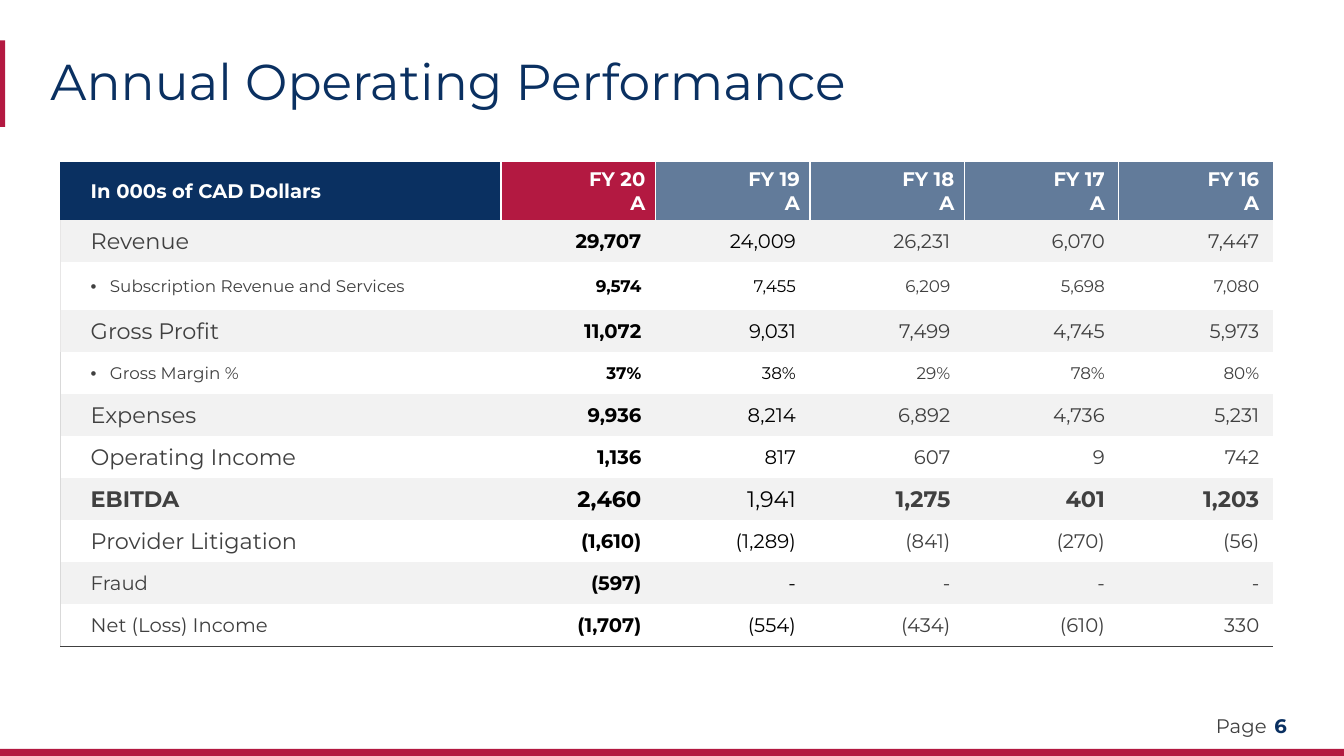
from lxml import etree
from pptx import Presentation
from pptx.dml.color import RGBColor
from pptx.enum.shapes import MSO_SHAPE
from pptx.enum.text import MSO_ANCHOR, MSO_AUTO_SIZE, PP_ALIGN
from pptx.oxml.ns import qn
from pptx.util import Inches, Pt

RECTANGLE = MSO_SHAPE.RECTANGLE
MIDDLE = MSO_ANCHOR.MIDDLE
TOP = MSO_ANCHOR.TOP
LEFT = PP_ALIGN.LEFT
RIGHT = PP_ALIGN.RIGHT
NO_AUTOFIT = MSO_AUTO_SIZE.NONE

FONT = "Montserrat"
COLORS = {
    "red": "B31941",
    "navy": "0A3061",
    "slate": "627B9A",
    "gray": "404040",
    "black": "000000",
    "white": "FFFFFF",
    "band": "F2F2F2",
    "edge": "D9D9D9",
    "upper_edge": "E7E6E6",
}
PLAIN_TABLE_STYLE = "{2D5ABB26-0587-4C30-8999-92F81FD0307C}"
TABLE_WIDTH, LABEL_WIDTH = 12.03, 4.37
TABLE_HEIGHT, HEADER_HEIGHT, SUBSCRIPTION_HEIGHT = 4.8, 0.57, 0.48
YEARS = ["FY 20", "FY 19", "FY 18", "FY 17", "FY 16"]
BULLET_ROWS = ["Subscription Revenue and Services", "Gross Margin %"]
TOTAL_ROW = "EBITDA"
# label, label size, value size, values
ROWS = [
    ("Revenue", 16, 14, ["29,707", "24,009", "26,231", "6,070", "7,447"]),
    ("Subscription Revenue and Services", 12, 12,
     ["9,574", "7,455", "6,209", "5,698", "7,080"]),
    ("Gross Profit", 16, 14, ["11,072", "9,031", "7,499", "4,745", "5,973"]),
    ("Gross Margin %", 12, 12, ["37%", "38%", "29%", "78%", "80%"]),
    ("Expenses", 16, 14, ["9,936", "8,214", "6,892", "4,736", "5,231"]),
    ("Operating Income", 16, 14, ["1,136", "817", "607", "9", "742"]),
    ("EBITDA", 16, 16, ["2,460", "1,941", "1,275", "401", "1,203"]),
    ("Provider Litigation", 16, 14,
     ["(1,610)", "(1,289)", "(841)", "(270)", "(56)"]),
    ("Fraud", 14, 14, ["(597)", "-", "-", "-", "-"]),
    ("Net (Loss) Income", 14, 14,
     ["(1,707)", "(554)", "(434)", "(610)", "330"]),
]


def apply_format(target, **values):
    """Set each named attribute on the target."""
    for name, value in values.items():
        setattr(target, name, value)


def rgb(color):
    """Return the named colour."""
    return RGBColor.from_string(COLORS[color])


def write_text(frame, lines, size, color, bold=False, align=LEFT):
    """Write one paragraph per line in the slide's font."""
    frame.text = "\n".join(lines)
    for para in frame.paragraphs:
        para.alignment = align
        for span in para.runs:
            apply_format(span.font, name=FONT, size=Pt(size), bold=bold)
            span.font.color.rgb = rgb(color)


def format_frame(frame, wrap=True):
    """Remove the insets of a text frame and centre it vertically."""
    apply_format(frame, margin_left=0, margin_right=0, margin_top=0,
                 margin_bottom=0, vertical_anchor=MIDDLE, word_wrap=wrap,
                 auto_size=NO_AUTOFIT)


def add_bar(page, left, top, width, height):
    """Add a red accent bar."""
    bar = page.shapes.add_shape(RECTANGLE, Inches(left), Inches(top),
                                Inches(width), Inches(height))
    bar.shadow.inherit = False
    bar.fill.solid()
    bar.fill.fore_color.rgb = rgb("red")
    bar.line.fill.background()


def add_title(page, text):
    """Place and format the title placeholder."""
    title = page.shapes.title
    apply_format(title, left=Inches(0.5), top=Inches(0.56),
                 width=Inches(12.3), height=Inches(0.55))
    format_frame(title.text_frame)
    write_text(title.text_frame, [text], 36, "navy")
    title.text_frame.paragraphs[0].line_spacing = 0.9


def add_footer_text(page, left, width, text, color, bold, wrap):
    """Add one part of the page number line."""
    box = page.shapes.add_textbox(Inches(left), Inches(7.08),
                                  Inches(width), Inches(0.24))
    format_frame(box.text_frame, wrap)
    write_text(box.text_frame, [text], 14, color, bold)


def add_borders(cell, borders):
    """Add cell borders given as tag, colour and width, in schema order."""
    properties = cell._tc.get_or_add_tcPr()
    for tag, color, width in borders:
        line = etree.SubElement(properties, qn(f"a:{tag}"), w=str(Pt(width)))
        fill = etree.SubElement(line, qn("a:solidFill"))
        etree.SubElement(fill, qn("a:srgbClr"), val=COLORS[color])


def format_cell(cell, fill, borders, left=0.14, right=0.14, anchor=MIDDLE):
    """Set the insets, borders and fill of a cell."""
    apply_format(cell, margin_left=Inches(left), margin_right=Inches(right),
                 margin_top=Inches(0.05), margin_bottom=Inches(0.05),
                 vertical_anchor=anchor)
    add_borders(cell, borders)
    cell.fill.solid()
    cell.fill.fore_color.rgb = rgb(fill)


def add_bullet(para):
    """Give a paragraph a bullet with a hanging indent."""
    properties = para._p.get_or_add_pPr()
    properties.set("marL", str(Inches(0.19)))
    properties.set("indent", str(Inches(-0.19)))
    etree.SubElement(properties, qn("a:buFont"), typeface="Arial")
    etree.SubElement(properties, qn("a:buChar"), char="•")


def fill_header(table):
    """Fill the heading row."""
    label = table.cell(0, 0)
    format_cell(label, "navy", [("lnR", "white", 1)], 0.3, 0.1)
    write_text(label.text_frame, ["In 000s of CAD Dollars"], 14, "white", True)
    for column, year in enumerate(YEARS, 1):
        cell = table.cell(0, column)
        inset, anchor = (0.1, MIDDLE) if column < 4 else (0.14, TOP)
        format_cell(cell, "red" if column == 1 else "slate",
                    [("lnL", "white", 1), ("lnR", "white", 1)],
                    inset, inset, anchor)
        write_text(cell.text_frame, [year, "A"], 14, "white", True, RIGHT)


def fill_row(table, row, label, label_size, value_size, values):
    """Fill one row of results."""
    fill = "band" if row % 2 else "white"
    bottom = [("lnB", "gray", 1)] if row == len(ROWS) else []
    edge = ("lnL", "upper_edge", 1) if row < 4 else ("lnL", "edge", 0.5)
    total = label == TOTAL_ROW
    cell = table.cell(row, 0)
    format_cell(cell, fill, [edge] + bottom, 0.3, 0.1)
    write_text(cell.text_frame, [label], label_size, "gray", total)
    if label in BULLET_ROWS:
        add_bullet(cell.text_frame.paragraphs[0])
    for column, value in enumerate(values, 1):
        cell = table.cell(row, column)
        format_cell(cell, fill, bottom)
        write_text(cell.text_frame, [value], value_size,
                   "black" if column < 3 else "gray",
                   column == 1 or (total and column > 2), RIGHT)


def add_results_table(page):
    """Add the table of yearly results."""
    frame = page.shapes.add_table(len(ROWS) + 1, len(YEARS) + 1, Inches(0.6),
                                  Inches(1.61), Inches(TABLE_WIDTH),
                                  Inches(TABLE_HEIGHT))
    table = frame.table
    apply_format(table, first_row=False, horz_banding=False)
    table._tbl.tblPr.find(qn("a:tableStyleId")).text = PLAIN_TABLE_STYLE
    year_width = (TABLE_WIDTH - LABEL_WIDTH) / len(YEARS)
    for index, column in enumerate(table.columns):
        column.width = Inches(year_width if index else LABEL_WIDTH)
    row_height = ((TABLE_HEIGHT - HEADER_HEIGHT - SUBSCRIPTION_HEIGHT)
                  / (len(ROWS) - 1))
    special_heights = {0: HEADER_HEIGHT, 2: SUBSCRIPTION_HEIGHT}
    for index, row in enumerate(table.rows):
        row.height = Inches(special_heights.get(index, row_height))
    fill_header(table)
    for row, content in enumerate(ROWS, 1):
        fill_row(table, row, *content)


def main():
    """Build the slide and save the deck."""
    deck = Presentation()
    apply_format(deck, slide_width=Inches(13.33), slide_height=Inches(7.5))
    page = deck.slides.add_slide(deck.slide_layouts[5])
    add_bar(page, 0, 7.43, 13.33, 0.07)
    add_bar(page, 0, 0.4, 0.05, 0.86)
    add_title(page, "Annual Operating Performance")
    add_footer_text(page, 12.06, 0.5, "Page", "gray", False, False)
    add_footer_text(page, 12.64, 0.33, "6", "navy", True, True)
    add_results_table(page)
    deck.save("out.pptx")


if __name__ == "__main__":
    main()
